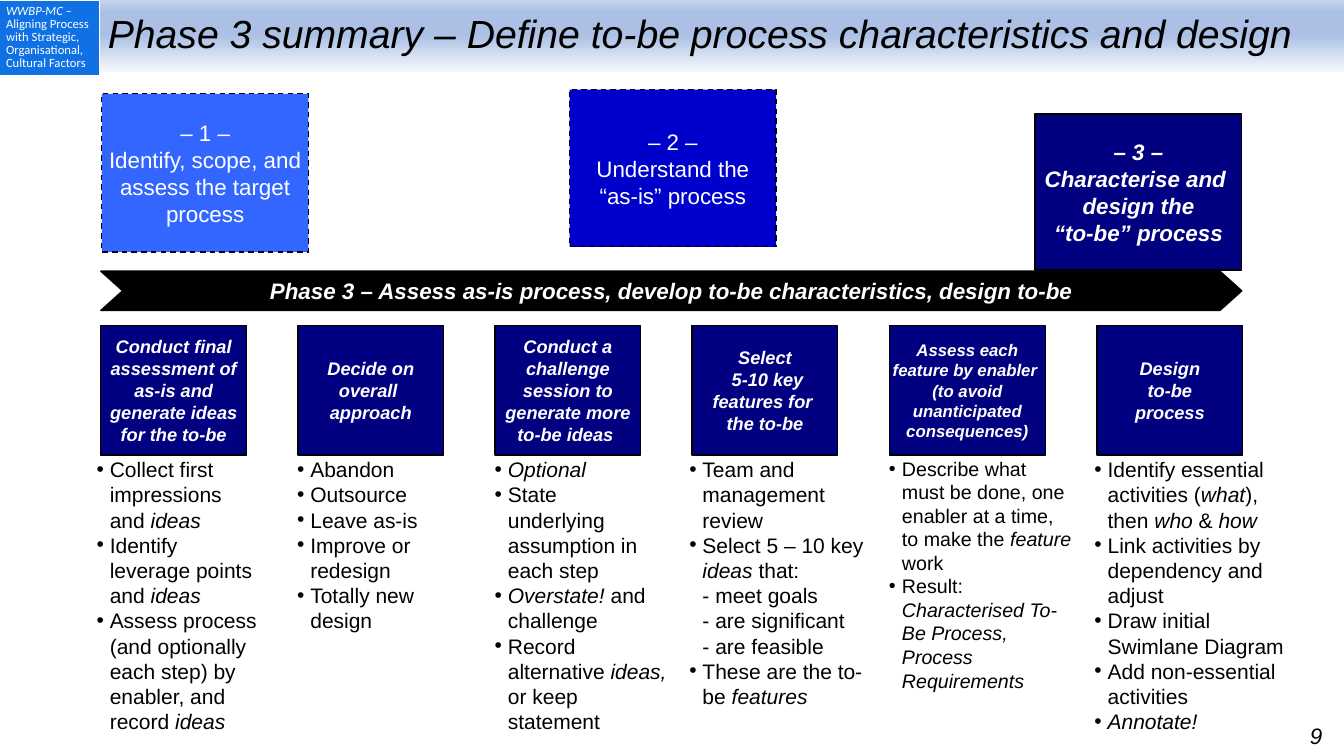
from lxml.etree import SubElement
from pptx import Presentation
from pptx.dml.color import RGBColor
from pptx.enum.dml import MSO_LINE
from pptx.enum.shapes import MSO_SHAPE
from pptx.enum.text import MSO_ANCHOR, MSO_AUTO_SIZE, PP_ALIGN
from pptx.oxml.ns import qn
from pptx.util import Pt

# Content: *...* switches italics, \n breaks a line inside a paragraph
TITLE = "Phase 3 summary – Define to-be process characteristics and design"
COURSE = "*WWBP-MC – *\nAligning Process with Strategic, Organisational, Cultural Factors"
BANNER = "Phase 3 – Assess as-is process, develop to-be characteristics, design to-be"
PAGE = "9"

# left, top, height, fill, current phase, paragraphs
PHASES = [
    (72.7, 67, 113, "phase1", False,
     ["– 1 –", "Identify, scope, and assess the target process"]),
    (406.8, 64, 112.3, "phase2", False,
     ["– 2 –", "Understand the", "“as-is” process"]),
    (739.4, 81.4, 111.6, "navy", True,
     ["– 3 –", "Characterise and ", "design the\n“to-be” process"]),
]

# box width, box text size, box paragraphs, list left, list width, list size, list items
STEPS = [
    (104, 13, ["Conduct final assessment of as-is and generate ideas for the to-be"],
     61.9, 145.4, 15,
     ["Collect first impressions \nand *ideas*",
      "Identify \nleverage points and *ideas*",
      "Assess process (and optionally each step) by enabler, and record *ideas*"]),
    (104, 13, ["Decide on overall \napproach"],
     205.2, 139, 15,
     ["Abandon", "Outsource", "Leave as-is", "Improve or redesign", "Totally new design"]),
    (104, 13, ["Conduct a challenge session to", "generate more to-be ideas "],
     346.3, 139, 15,
     ["*Optional*",
      "State \nunderlying assumption in each step",
      "*Overstate! *and challenge",
      "Record alternative *ideas,* or keep statement"]),
    (104, 13, ["Select\n 5-10 key features for \nthe to-be"],
     485.3, 142.6, 15,
     ["Team and management review",
      "Select 5 – 10 key *ideas* that:\n- meet goals\n- are significant\n- are feasible",
      "These are the to-be *features*"]),
    (111.6, 12,
     ["Assess each feature by enabler \n(to avoid unanticipated consequences)"],
     627.8, 146.2, 14,
     ["Describe what must be done, one enabler at a time, \nto make the *feature* work",
      "Result:\n*Characterised To-Be Process, Process Requirements*"]),
    (104, 13, ["Design\nto-be\nprocess"],
     774.7, 160.6, 15,
     ["Identify essential activities (*what*), then *who* & *how*",
      "Link activities by dependency and adjust",
      "Draw initial Swimlane Diagram",
      "Add non-essential activities",
      "*Annotate!*"]),
]

COLORS = {"black": "000000", "white": "FFFFFF", "course": "1071E5",
          "phase1": "3366FF", "phase2": "0000CC", "navy": "000080"}
BAND_STOPS = [(0, "F6F8FC"), (51, "ABC0E4"), (83, "ABC0E4"), (100, "C7D5ED")]

SLIDE_W, SLIDE_H = 960, 540
STEP_LEFT, STEP_TOP, STEP_H, STEP_GAP = 72, 232.7, 92.2, 36.8
LIST_TOP, LIST_H = 322.6, 207.4
PHASE_W = 147.6
INDENT = 9.4


def color(key):
    return RGBColor.from_string(COLORS[key])


def place(left, top, width, height):
    return Pt(left), Pt(top), Pt(width), Pt(height)


def write(frame, paragraphs, size, ink="black", strong=False, italic=False,
          align=PP_ALIGN.LEFT, face="Arial"):
    frame.word_wrap = True
    for index, text in enumerate(paragraphs):
        paragraph = frame.paragraphs[0] if index == 0 else frame.add_paragraph()
        paragraph.alignment = align
        for part, piece in enumerate(text.split("*")):
            for row, words in enumerate(piece.split("\n")):
                if row:
                    paragraph.add_line_break()
                if words:
                    run = paragraph.add_run()
                    run.text = words
                    run.font.name, run.font.size = face, Pt(size)
                    run.font.bold = strong
                    run.font.italic = italic or part % 2 == 1
                    run.font.color.rgb = color(ink)
        for line_break in paragraph._p.findall(qn("a:br")):
            SubElement(line_break, qn("a:rPr"), sz=str(size * 100))


def add_block(kind, box, fill, line=None):
    block = slide.shapes.add_shape(kind, *place(*box))
    block.shadow.inherit = False
    block.fill.solid()
    block.fill.fore_color.rgb = color(fill)
    if line:
        block.line.color.rgb = color(line)
        block.line.width = Pt(1)
    else:
        block.line.fill.background()
    return block


def set_margins(frame, side, end):
    frame.margin_left = frame.margin_right = Pt(side)
    frame.margin_top = frame.margin_bottom = Pt(end)


def add_label(kind, box, fill, paragraphs, size, strong=True, end=7.2):
    label = add_block(kind, box, fill, "black")
    set_margins(label.text_frame, 0, end)
    label.text_frame.vertical_anchor = MSO_ANCHOR.MIDDLE
    write(label.text_frame, paragraphs, size, "white", strong, strong, PP_ALIGN.CENTER)
    return label


def add_bullets(frame):
    for paragraph in frame.paragraphs:
        props = paragraph._p.get_or_add_pPr()
        props.set("marL", str(Pt(INDENT)))
        props.set("indent", str(-Pt(INDENT)))
        bullet_color = SubElement(props, qn("a:buClr"))
        SubElement(bullet_color, qn("a:srgbClr"), val=COLORS["black"])
        SubElement(props, qn("a:buFont"), typeface="Arial")
        SubElement(props, qn("a:buChar"), char="•")


prs = Presentation()
prs.slide_width, prs.slide_height = Pt(SLIDE_W), Pt(SLIDE_H)
slide = prs.slides.add_slide(prs.slide_layouts[5])

# Course tag
course_table = slide.shapes.add_table(1, 1, *place(-1.4, 0, 72.7, 52)).table
course_table.first_row = course_table.horz_banding = False
course = course_table.cell(0, 0)
course.fill.solid()
course.fill.fore_color.rgb = color("course")
set_margins(course, 5.7, 3.6)
write(course.text_frame, [COURSE], 9, "white", face="Calibri")
course.text_frame.paragraphs[0].line_spacing = 0.85

# Title band
band = add_block(MSO_SHAPE.RECTANGLE, (71.3, 0, SLIDE_W - 71.3, 51.1), "white")
band.fill.gradient()
band.fill.gradient_angle = 90
stops = band._element.spPr.find(qn("a:gradFill")).find(qn("a:gsLst"))
stops.clear()
for position, shade in BAND_STOPS:
    stop = SubElement(stops, qn("a:gs"), pos=str(position * 1000))
    SubElement(stop, qn("a:srgbClr"), val=shade)

# Page number
page = add_block(MSO_SHAPE.RECTANGLE, (876.2, 515.5, 68.4, 19.4), "white")
set_margins(page.text_frame, 0, 0)
page.text_frame.vertical_anchor = MSO_ANCHOR.TOP
write(page.text_frame, [PAGE], 16, italic=True, align=PP_ALIGN.RIGHT)

# Title, moved in front of the band
title = slide.shapes.title
title.left, title.top, title.width, title.height = place(69.8, 0, 878.4, 51.1)
title.text_frame.auto_size = MSO_AUTO_SIZE.NONE
title.text_frame.vertical_anchor = MSO_ANCHOR.MIDDLE
write(title.text_frame, [TITLE], 28, italic=True)
title.text_frame.paragraphs[0].line_spacing = 0.9
page._element.addnext(title._element)

# Banner arrow
banner = add_label(MSO_SHAPE.CHEVRON, (72, 193.7, 815, 28.1), "black", [BANNER], 16, end=3.6)
banner.adjustments[0] = 0.555

# Steps and their lists
step_left = STEP_LEFT
for width, size, step, list_left, list_width, list_size, items in STEPS:
    add_label(MSO_SHAPE.RECTANGLE, (step_left, STEP_TOP, width, STEP_H), "navy", step, size)
    step_left += width + STEP_GAP
    actions = slide.shapes.add_textbox(*place(list_left, LIST_TOP, list_width, LIST_H))
    write(actions.text_frame, items, list_size)
    add_bullets(actions.text_frame)

# Phases
for left, top, height, fill, current, paragraphs in PHASES:
    phase = add_label(MSO_SHAPE.RECTANGLE, (left, top, PHASE_W, height), fill,
                      paragraphs, 16, current)
    if not current:
        phase.line.dash_style = MSO_LINE.DASH

prs.save("out.pptx")
